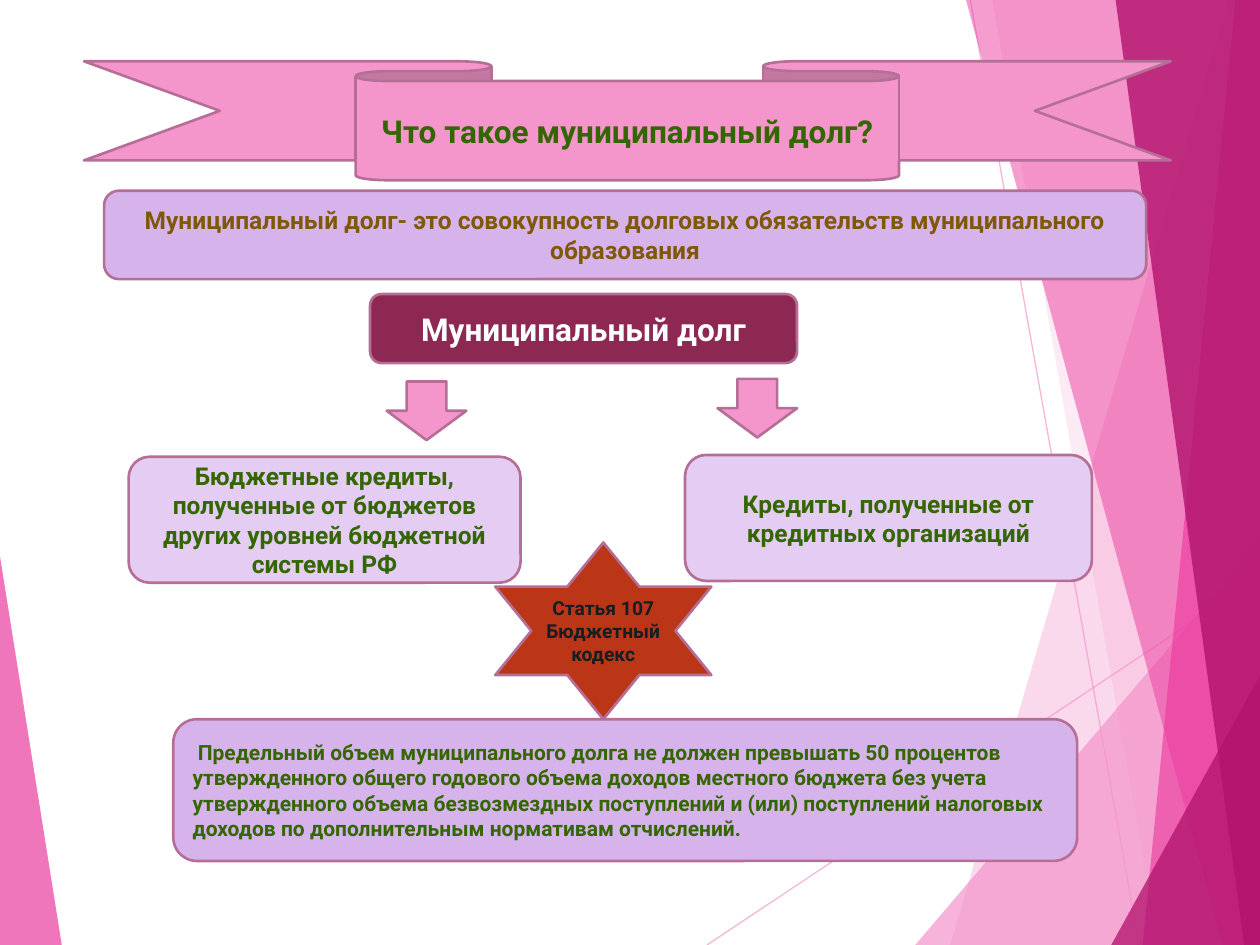
from lxml import etree
from pptx import Presentation
from pptx.dml.color import RGBColor
from pptx.enum.shapes import MSO_CONNECTOR, MSO_SHAPE
from pptx.enum.text import MSO_ANCHOR, MSO_AUTO_SIZE, PP_ALIGN
from pptx.oxml.ns import qn
from pptx.util import Pt

RIBBON = MSO_SHAPE.DOWN_RIBBON
ROUNDED = MSO_SHAPE.ROUNDED_RECTANGLE
ARROW = MSO_SHAPE.DOWN_ARROW
STAR = MSO_SHAPE.STAR_6_POINT
STRAIGHT = MSO_CONNECTOR.STRAIGHT
LEFT, CENTER = PP_ALIGN.LEFT, PP_ALIGN.CENTER
MIDDLE = MSO_ANCHOR.MIDDLE

FONT = "Roboto"
WHITE = RGBColor(0xFF, 0xFF, 0xFF)
PINK = RGBColor(0xF4, 0x96, 0xCB)
HOT_PINK = RGBColor(0xEB, 0x3D, 0x9F)
MAGENTA = RGBColor(0xB2, 0x13, 0x6D)
OUTLINE = RGBColor(0xB5, 0x6F, 0x96)
LILAC = RGBColor(0xD7, 0xB3, 0xEC)
PALE_LILAC = RGBColor(0xE4, 0xCC, 0xF3)
WINE = RGBColor(0x8D, 0x28, 0x53)
RUST = RGBColor(0xBB, 0x35, 0x17)
GREEN = RGBColor(0x33, 0x66, 0x00)
BROWN = RGBColor(0x7E, 0x58, 0x07)
DARK = RGBColor(0x16, 0x1E, 0x22)

WIDTH, HEIGHT = 720, 540

# Background facets: corner points, colour, opacity in percent
FACETS = [
    ([(702, 0), (543, 540), (720, 540), (720, 0)], PINK, 36),
    ([(567, 0), (662, 540), (720, 540), (720, 0)], PINK, 20),
    ([(523, 540), (720, 309), (720, 540)], PINK, 72),
    ([(552, 0), (698.5, 540), (720, 540), (720, 0)], HOT_PINK, 50),
    ([(706, 0), (653, 540), (720, 540), (720, 0)], HOT_PINK, 66),
    ([(637.5, 0), (711, 540), (720, 540), (720, 0)], MAGENTA, 80),
    ([(635, 540), (720, 386), (720, 540)], MAGENTA, 76),
    ([(0, 318), (35.3, 540), (0, 540)], HOT_PINK, 70),
]
RAYS = [(404, 540, 720, 329.5), (554.5, 0, 651, 540)]


def set_opacity(properties, percent):
    color = next(properties.iter(qn("a:srgbClr")))
    etree.SubElement(color, qn("a:alpha"), val=str(percent * 1000))


def add_facet(slide, points, color, opacity):
    corners = [(Pt(x), Pt(y)) for x, y in points]
    builder = slide.shapes.build_freeform(*corners[0])
    builder.add_line_segments(corners[1:], close=True)
    shape = builder.convert_to_shape()
    shape.shadow.inherit = False
    shape.fill.solid()
    shape.fill.fore_color.rgb = color
    shape.line.fill.background()
    set_opacity(shape.element.spPr, opacity)


def add_ray(slide, *ends):
    connector = slide.shapes.add_connector(STRAIGHT, *map(Pt, ends))
    connector.line.color.rgb = PINK
    connector.line.width = Pt(0.75)
    properties = connector.element.spPr
    set_opacity(properties, 70)
    etree.SubElement(properties, qn("a:effectLst"))


def write_text(shape, text, size=14, color=GREEN, align=CENTER):
    frame = shape.text_frame
    frame.word_wrap = True
    frame.auto_size = MSO_AUTO_SIZE.NONE
    frame.vertical_anchor = MIDDLE
    paragraph = frame.paragraphs[0]
    paragraph.alignment = align
    run = paragraph.add_run()
    run.text = text
    run.font.name = FONT
    run.font.size = Pt(size)
    run.font.bold = True
    run.font.color.rgb = color


def add_figure(slide, kind, box, fill):
    shape = slide.shapes.add_shape(kind, *map(Pt, box))
    shape.shadow.inherit = False
    shape.fill.solid()
    shape.fill.fore_color.rgb = fill
    shape.line.color.rgb = OUTLINE
    shape.line.width = Pt(1.5)
    return shape


def add_title(slide, text, left, top, width, height):
    title = slide.shapes.title
    title.left, title.top = Pt(left), Pt(top)
    title.width, title.height = Pt(width), Pt(height)
    write_text(title, text, size=18)
    # Bring the title in front of the ribbon
    title.element.getparent().append(title.element)


def main():
    presentation = Presentation()
    presentation.slide_width, presentation.slide_height = Pt(WIDTH), Pt(HEIGHT)
    slide = presentation.slides.add_slide(presentation.slide_layouts[5])

    # Background
    for ray in RAYS:
        add_ray(slide, *ray)
    for points, color, opacity in FACETS:
        add_facet(slide, points, color, opacity)

    # Title on the front panel of the ribbon
    add_figure(slide, RIBBON, (48, 35, 621, 68), PINK)
    add_title(slide, "Что такое муниципальный долг?", 203, 46.5, 311, 56.5)

    # Definition
    definition = add_figure(slide, ROUNDED, (59.5, 109, 595.5, 50.5), LILAC)
    write_text(definition, "Муниципальный долг- это совокупность долговых "
               "обязательств муниципального образования", color=BROWN)

    # Debt and its two kinds
    debt = add_figure(slide, ROUNDED, (211.5, 168, 244, 39.5), WINE)
    write_text(debt, "Муниципальный долг", size=18, color=WHITE)
    budget_loans = add_figure(slide, ROUNDED, (73.5, 261, 224, 72), PALE_LILAC)
    write_text(budget_loans, "Бюджетные кредиты, полученные от бюджетов "
               "других уровней бюджетной системы РФ")
    bank_loans = add_figure(slide, ROUNDED, (391.5, 260, 232.5, 72), PALE_LILAC)
    write_text(bank_loans, "Кредиты, полученные от кредитных организаций")
    for left, top in [(221, 218), (410, 216.5)]:
        add_figure(slide, ARROW, (left, top, 45.5, 33.5), PINK)

    # Debt limit and the article that sets it
    limit = add_figure(slide, ROUNDED, (99, 411, 516.5, 81), LILAC)
    write_text(limit, " Предельный объем муниципального долга не должен "
               "превышать 50 процентов утвержденного общего годового объема "
               "доходов местного бюджета без учета утвержденного объема "
               "безвозмездных поступлений и (или) поступлений налоговых "
               "доходов по дополнительным нормативам отчислений.",
               size=12, align=LEFT)
    article = add_figure(slide, STAR, (283, 310, 123.5, 101), RUST)
    write_text(article, "Статья 107 Бюджетный кодекс", size=11, color=DARK)

    presentation.save("out.pptx")


if __name__ == "__main__":
    main()
